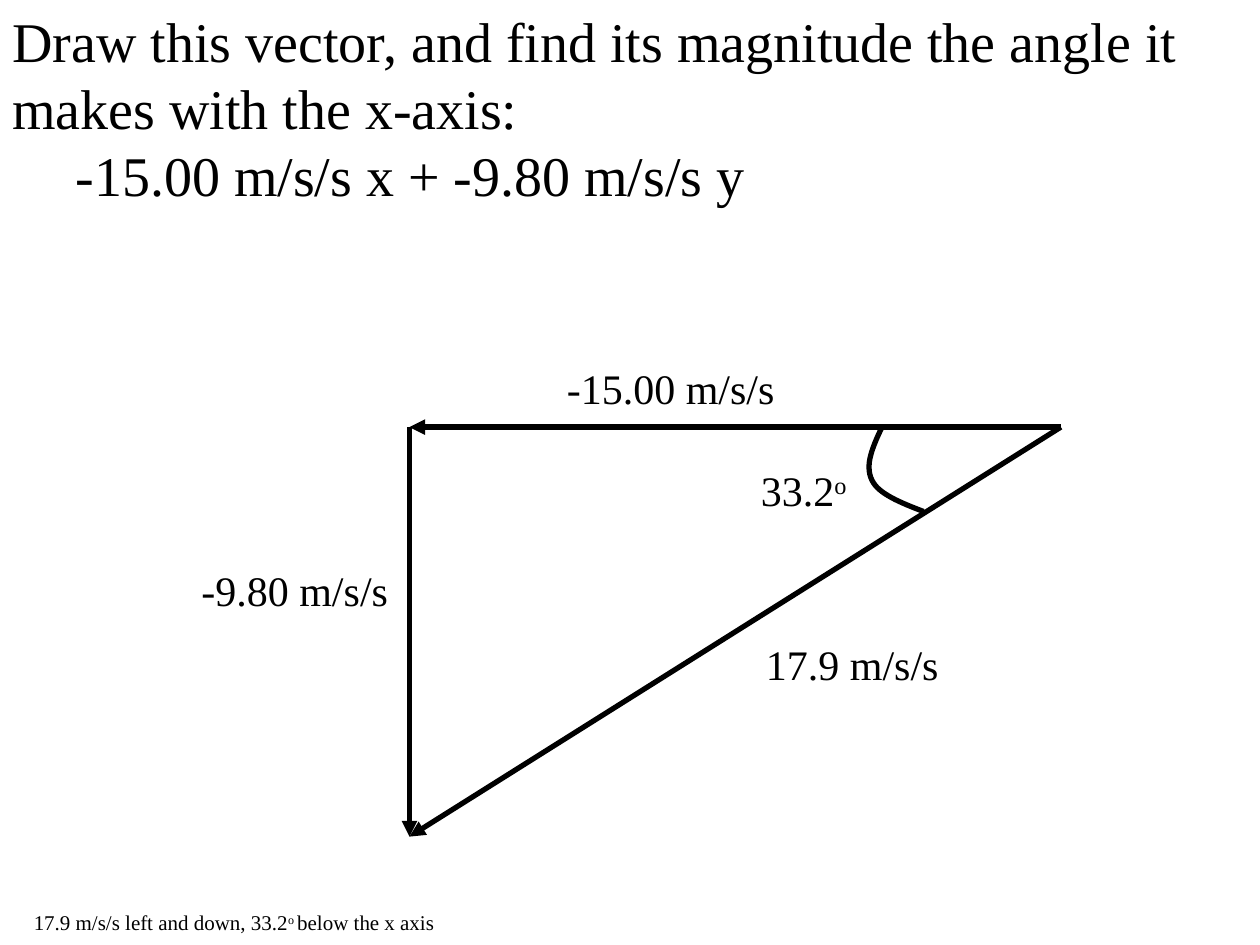
from lxml import etree
from pptx import Presentation
from pptx.dml.color import RGBColor
from pptx.enum.shapes import MSO_CONNECTOR
from pptx.enum.text import MSO_AUTO_SIZE as AutoSize
from pptx.oxml.ns import qn
from pptx.util import Inches, Pt

COLORS = {"ink": "000000", "paper": "FFFFFF"}
INK = RGBColor.from_string(COLORS["ink"])
FONT = "Times New Roman"

# Corners of the vector triangle, in inches
START = (8.42, 3.39)
CORNER = (3.25, 3.39)
TIP = (3.25, 6.64)
VECTORS = [(START, CORNER), (CORNER, TIP), (START, TIP)]

# Each curve of the angle mark: start, two control points, end
ANGLE_CURVES = [
    [(7, 3.39), (6.93, 3.54), (6.86, 3.69), (6.92, 3.81)],
    [(6.92, 3.81), (6.97, 3.92), (7.15, 3.99), (7.33, 4.06)],
]
CURVE_STEPS = 16

LABELS = [
    ((4.4, 2.83, 1.85, 0.5), ["-15.00 m/s/s"]),
    ((1.5, 4.43, 1.68, 0.5), ["-9.80 m/s/s"]),
    ((5.98, 5.02, 1.57, 0.5), ["17.9 m/s/s"]),
    ((5.94, 3.64, 0.9, 0.5), ["33.2", "o"]),
]


def add_text(shapes, box, paragraphs, size, wrap=False):
    """Add a text box; every second run of a paragraph is superscript."""
    frame = shapes.add_textbox(*map(Inches, box)).text_frame
    frame.word_wrap = wrap
    frame.auto_size = AutoSize.SHAPE_TO_FIT_TEXT
    font_format = {"name": FONT, "size": Pt(size)}
    for number, pieces in enumerate(paragraphs):
        paragraph = frame.add_paragraph() if number else frame.paragraphs[0]
        for position, piece in enumerate(pieces):
            run = paragraph.add_run()
            run.text = piece
            for attribute, value in font_format.items():
                setattr(run.font, attribute, value)
            run.font.color.rgb = INK
            if position % 2:
                run._r.get_or_add_rPr().set("baseline", "30000")


def style_line(line):
    line.color.rgb = INK
    line.width = Pt(3)


def add_vector(shapes, start, end):
    vector = shapes.add_connector(
        MSO_CONNECTOR.STRAIGHT, *map(Inches, start + end))
    style_line(vector.line)
    etree.SubElement(vector.line._get_or_add_ln(), qn("a:tailEnd"),
                     type="triangle")
    etree.SubElement(vector._element.spPr, qn("a:effectLst"))


def curve_point(curve, t):
    """Return the point of a cubic Bezier curve at t."""
    weights = ((1 - t) ** 3, 3 * t * (1 - t) ** 2, 3 * t ** 2 * (1 - t), t ** 3)
    return tuple(Inches(sum(w * c for w, c in zip(weights, axis)))
                 for axis in zip(*curve))


def add_angle_mark(shapes):
    first, *others = [curve_point(ANGLE_CURVES[0], 0)] + [
        curve_point(curve, step / CURVE_STEPS)
        for curve in ANGLE_CURVES for step in range(1, CURVE_STEPS + 1)]
    builder = shapes.build_freeform(*first)
    builder.add_line_segments(others, close=False)
    mark = builder.convert_to_shape()
    mark.shadow.inherit = False
    mark.fill.background()
    style_line(mark.line)


def add_diagram(slide):
    diagram = slide.shapes.add_group_shape().shapes
    for start, end in VECTORS:
        add_vector(diagram, start, end)
    add_angle_mark(diagram)
    for box, pieces in LABELS:
        add_text(diagram, box, [pieces], 24)


def main():
    deck = Presentation()
    deck.slide_width, deck.slide_height = Inches(10), Inches(7.5)
    slide = deck.slides.add_slide(deck.slide_layouts[6])
    background = slide.background.fill
    background.solid()
    background.fore_color.rgb = RGBColor.from_string(COLORS["paper"])

    answer = ["17.9 m/s/s left and down, 33.2", "o ", "below the x axis"]
    add_text(slide.shapes, (0.17, 7.17, 3.4, 0.44), [answer], 12)
    question = [
        ["Draw this vector, and find its magnitude the angle it makes "
         "with the x-axis:"],
        ["\t-15.00 m/s/s x + -9.80 m/s/s y"],
    ]
    add_text(slide.shapes, (0, 0, 10, 1.72), question, 32, wrap=True)
    add_diagram(slide)
    deck.save("out.pptx")


if __name__ == "__main__":
    main()
